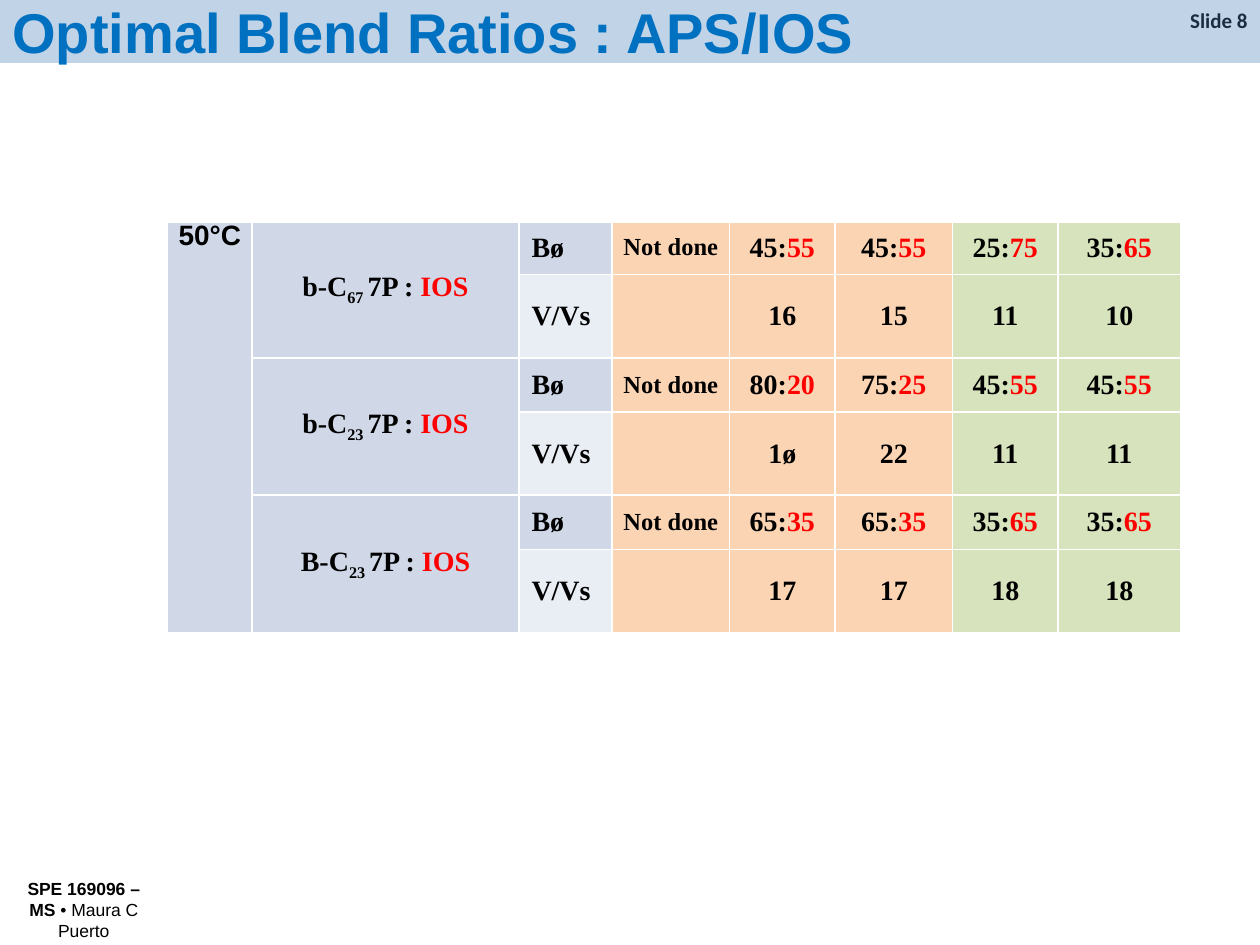
from lxml.etree import SubElement
from pptx import Presentation
from pptx.dml.color import RGBColor
from pptx.enum.shapes import MSO_SHAPE
from pptx.enum.text import MSO_ANCHOR as Anchor, PP_ALIGN as Align
from pptx.oxml import parse_xml
from pptx.oxml.ns import nsdecls, qn
from pptx.util import Inches, Pt

COLORS = {
    "banner": "4F81BD", "title": "0070C0", "black": "000000", "red": "FF0000",
    "white": "FFFFFF", "label": "D0D8E8", "pale": "E9EDF4",
    "orange": "FBD4B4", "green": "D6E3BC",
}
SERIF = "Times New Roman"

# Each blend: name, subscript, surfactant:IOS ratios, V/Vs values
BLENDS = [
    ("b-C", "67 ", ["45:55", "45:55", "25:75", "35:65"], ["16", "15", "11", "10"]),
    ("b-C", "23 ", ["80:20", "75:25", "45:55", "45:55"], ["1ø", "22", "11", "11"]),
    ("B-C", "23 ", ["65:35", "65:35", "35:65", "35:65"], ["17", "17", "18", "18"]),
]
VALUE_FILLS = ["orange", "orange", "orange", "green", "green"]
COLUMN_WIDTHS = [0.67, 2.12, 0.74, 0.93, 0.84, 0.93, 0.84, 0.97]
ROW_HEIGHTS = [0.43, 0.66] * len(BLENDS)


def rgb(name):
    return RGBColor.from_string(COLORS[name])


def write(frame, *runs, size=16, font="Arial", color="black", bold=True, align=Align.LEFT):
    """Fill a frame with runs: strings, or (string, overrides) pairs."""
    frame.word_wrap = True
    para = frame.paragraphs[0]
    para.alignment = align
    for run in runs:
        text, changes = (run, {}) if isinstance(run, str) else run
        span = para.add_run()
        span.text = text
        span.font.size = Pt(size)
        span.font.name = font
        span.font.bold = changes.get("bold", bold)
        span.font.color.rgb = rgb(changes.get("color", color))
        if "baseline" in changes:
            span.font._element.set("baseline", str(changes["baseline"]))


def style_cell(cell, fill, top_width=1):
    cell.fill.solid()
    cell.fill.fore_color.rgb = rgb(fill)
    cell.vertical_anchor = Anchor.MIDDLE
    for index, side in enumerate("LRTB"):
        width = Pt(top_width if side == "T" else 1)
        cell._tc.get_or_add_tcPr().insert(index, parse_xml(
            f'<a:ln{side} {nsdecls("a")} w="{width}"><a:solidFill>'
            f'<a:srgbClr val="{COLORS["white"]}"/></a:solidFill></a:ln{side}>'))


def no_margins(cell):
    cell.margin_left = cell.margin_right = cell.margin_top = cell.margin_bottom = 0


deck = Presentation()
deck.slide_width, deck.slide_height = Inches(10), Inches(7.5)
page = deck.slides.add_slide(deck.slide_layouts[6])

# Slide number and footer
box = page.shapes.add_textbox(Inches(8.75), Inches(0.01), Inches(1.25), Inches(0.3))
write(box.text_frame, "Slide 8", size=12, font="Calibri", align=Align.RIGHT)
box = page.shapes.add_textbox(0, Inches(6.92), Inches(1.33), Inches(0.58))
write(box.text_frame, "SPE 169096 – MS ", ("• Maura C Puerto", {"bold": False}),
      size=10, align=Align.CENTER)

# Translucent title banner
banner = page.shapes.add_shape(MSO_SHAPE.RECTANGLE, 0, 0, deck.slide_width, Inches(0.5))
banner.shadow.inherit = False
banner.fill.solid()
banner.fill.fore_color.rgb = rgb("banner")
SubElement(next(banner._element.spPr.iter(qn("a:srgbClr"))), qn("a:alpha"), val="35000")
banner.line.fill.background()
banner.text_frame.vertical_anchor = Anchor.MIDDLE
write(banner.text_frame, "Optimal Blend Ratios : APS/IOS", size=32, color="title")

# Table grid
table = page.shapes.add_table(
    len(ROW_HEIGHTS), len(COLUMN_WIDTHS), Inches(1.33), Inches(1.75),
    Inches(sum(COLUMN_WIDTHS)), Inches(sum(ROW_HEIGHTS))).table
table.first_row = table.horz_banding = False
for column, width in zip(table.columns, COLUMN_WIDTHS):
    column.width = Inches(width)
for row, height in zip(table.rows, ROW_HEIGHTS):
    row.height = Inches(height)
for r in range(len(ROW_HEIGHTS)):
    fills = ["label", "label", "pale" if r % 2 else "label"] + VALUE_FILLS
    for c, fill in enumerate(fills):
        style_cell(table.cell(r, c), fill, top_width=1 if r else 3)

# Temperature column
temperature = table.cell(0, 0)
temperature.merge(table.cell(len(ROW_HEIGHTS) - 1, 0))
temperature.vertical_anchor = Anchor.TOP
no_margins(temperature)
write(temperature.text_frame, "50°C", align=Align.CENTER)

# Two rows for each blend
centred = {"font": SERIF, "align": Align.CENTER}
for i, (name, subscript, ratios, values) in enumerate(BLENDS):
    top, bottom = 2 * i, 2 * i + 1
    blend = table.cell(top, 1)
    blend.merge(table.cell(bottom, 1))
    write(blend.text_frame, name, (subscript, {"baseline": -25000}), "7P :",
          (" IOS", {"color": "red"}), **centred)
    write(table.cell(top, 2).text_frame, "Bø", font=SERIF)
    write(table.cell(bottom, 2).text_frame, "V/Vs", font=SERIF)
    no_margins(table.cell(top, 3))
    write(table.cell(top, 3).text_frame, "Not done", size=14, **centred)
    for c, (ratio, value) in enumerate(zip(ratios, values), start=4):
        first, second = ratio.split(":")
        write(table.cell(top, c).text_frame, first + ":", (second, {"color": "red"}), **centred)
        write(table.cell(bottom, c).text_frame, value, **centred)

deck.save("out.pptx")
